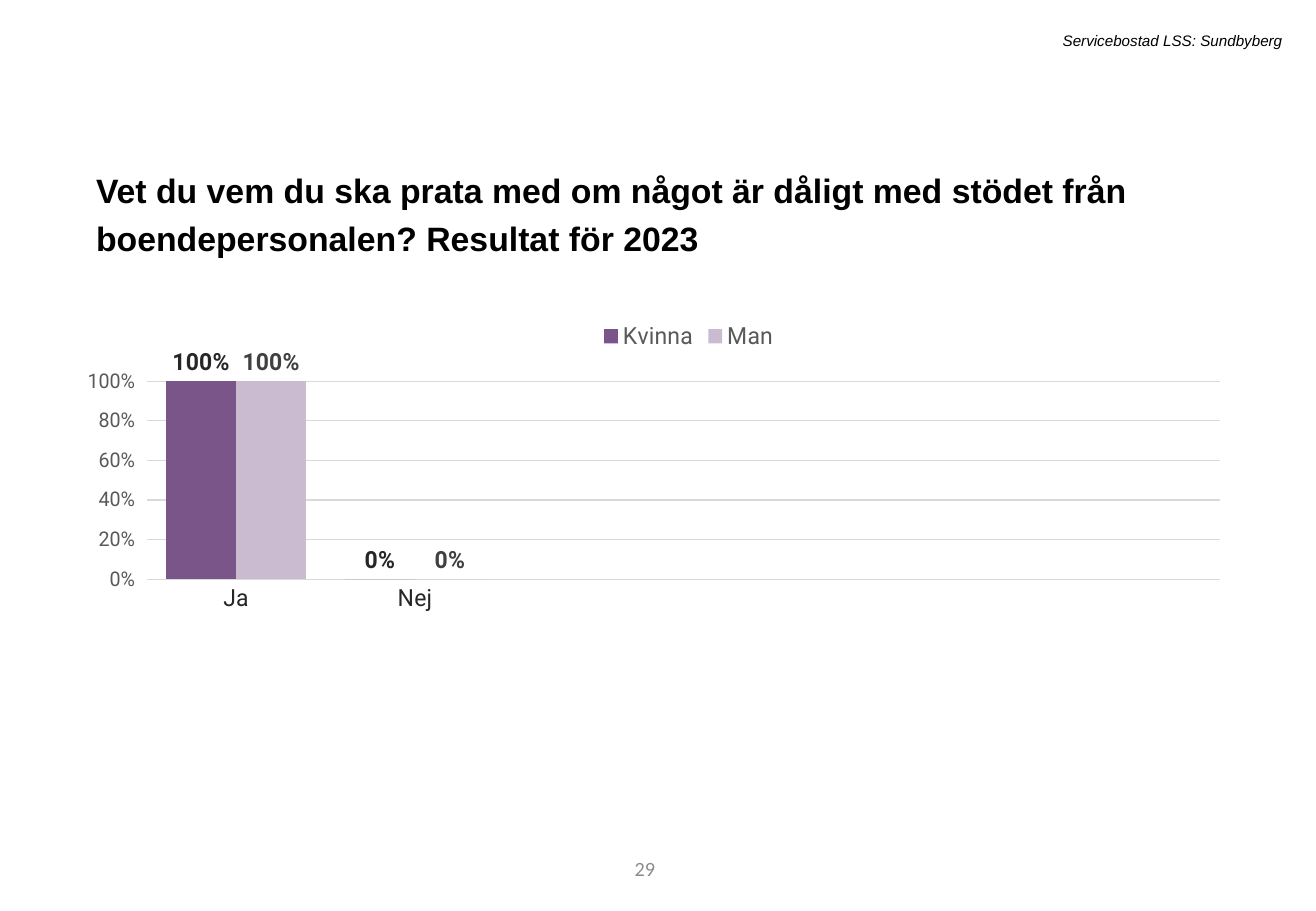
from pptx import Presentation
from pptx.chart.data import CategoryChartData
from pptx.dml.color import RGBColor
from pptx.enum.chart import XL_CHART_TYPE, XL_LABEL_POSITION, XL_LEGEND_POSITION, XL_TICK_MARK
from pptx.enum.text import MSO_ANCHOR, MSO_AUTO_SIZE, PP_ALIGN
from pptx.oxml import parse_xml
from pptx.oxml.ns import nsdecls
from pptx.util import Inches, Pt

COLORS = {
    "black": "000000",
    "page": "8C8C8C",
    "grid": "D9D9D9",
    "axis": "595959",
    "dark": "262626",
    "medium": "404040",
    "women": "7A5589",
    "men": "CABBD0",
}
CATEGORIES = ["Ja", "Nej", "", "", "", ""]
# Name, values, fill and label colour of each series
SERIES = [
    ("Kvinna", (1, 0), "women", "dark"),
    ("Man", (1, 0), "men", "medium"),
]


def color(name):
    return RGBColor.from_string(COLORS[name])


def format_font(font, size, color_name, name="Roboto", bold=False, italic=False):
    font.name = name
    font.size = Pt(size)
    font.bold = bold
    font.italic = italic
    font.color.rgb = color(color_name)


def write_text(shape, text, align=PP_ALIGN.LEFT, anchor=MSO_ANCHOR.TOP,
               auto_size=MSO_AUTO_SIZE.SHAPE_TO_FIT_TEXT, line_spacing=None,
               space_before=None, **font_format):
    frame = shape.text_frame
    frame.word_wrap = True
    frame.auto_size = auto_size
    frame.vertical_anchor = anchor
    paragraph = frame.paragraphs[0]
    paragraph.alignment = align
    paragraph.line_spacing = line_spacing
    paragraph.space_before = space_before
    run = paragraph.add_run()
    run.text = text
    format_font(run.font, **font_format)


def add_header(slide, left, top, width, height):
    box = slide.shapes.add_textbox(left, top, width, height)
    write_text(box, "Servicebostad LSS: Sundbyberg", align=PP_ALIGN.RIGHT,
               size=9, color_name="black", name="Arial", italic=True)


def add_title(slide, left, top, width, height):
    title = slide.shapes.title
    title.left, title.top, title.width, title.height = left, top, width, height
    write_text(title, "Vet du vem du ska prata med om något är dåligt med stödet från "
               "boendepersonalen? Resultat för 2023", line_spacing=1.2,
               space_before=Pt(10), size=20, color_name="black", name="Arial", bold=True)


def add_page_number(slide, left, top, width, height):
    box = slide.shapes.add_textbox(left, top, width, height)
    write_text(box, "29", align=PP_ALIGN.RIGHT, anchor=MSO_ANCHOR.MIDDLE,
               auto_size=MSO_AUTO_SIZE.NONE, size=12, color_name="page", name="Calibri")


def manual_layout(target=None, **fractions):
    """Return a chart layout element; fractions are x, y, w and h."""
    parts = f'<c:layoutTarget val="{target}"/>' if target else ""
    parts += "".join(f'<c:{key}Mode val="edge"/>' for key in "xy")
    parts += "".join(f'<c:{key} val="{value}"/>' for key, value in fractions.items())
    return parse_xml(f'<c:layout {nsdecls("c")}><c:manualLayout>{parts}'
                     '</c:manualLayout></c:layout>')


def add_result_chart(slide, left, top, width, height):
    data = CategoryChartData(number_format="0%")
    data.categories = CATEGORIES
    for name, values, _, _ in SERIES:
        data.add_series(name, values)
    chart = slide.shapes.add_chart(XL_CHART_TYPE.COLUMN_CLUSTERED,
                                   left, top, width, height, data).chart
    chart.has_title = False
    format_font(chart.font, 10, "black")

    # Legend
    chart.has_legend = True
    chart.legend.position = XL_LEGEND_POSITION.TOP
    chart.legend.include_in_layout = False
    format_font(chart.legend.font, 14, "axis")
    chart.element.xpath(".//c:legendPos")[0].addnext(manual_layout(x=0.43, y=0.02))

    # Plot area
    plot_area = chart.element.xpath(".//c:plotArea")[0]
    for layout in plot_area.xpath("./c:layout"):
        plot_area.remove(layout)
    plot_area.insert(0, manual_layout("inner", x=0.025, y=0.154, w=0.966, h=0.413))

    # Axes
    category_axis = chart.category_axis
    category_axis.major_tick_mark = XL_TICK_MARK.NONE
    format_font(category_axis.tick_labels.font, 14, "dark")
    value_axis = chart.value_axis
    value_axis.minimum_scale, value_axis.maximum_scale = 0, 1
    value_axis.major_unit = 0.2
    value_axis.major_tick_mark = XL_TICK_MARK.OUTSIDE
    value_axis.tick_labels.number_format = "0%"
    value_axis.tick_labels.number_format_is_linked = False
    format_font(value_axis.tick_labels.font, 12, "axis")
    value_axis.format.line.fill.background()
    for line in (category_axis.format.line, value_axis.major_gridlines.format.line):
        line.color.rgb = color("grid")
        line.width = Pt(0.75)

    # Columns and their labels
    plot = chart.plots[0]
    plot.gap_width = 55
    plot.overlap = 0
    plot.vary_by_categories = False
    for series, (_, _, fill, label_color) in zip(plot.series, SERIES):
        series.format.fill.solid()
        series.format.fill.fore_color.rgb = color(fill)
        labels = series.data_labels
        labels.show_value = True
        labels.position = XL_LABEL_POSITION.OUTSIDE_END
        labels.number_format = "0%"
        labels.number_format_is_linked = False
        format_font(labels.font, 14, label_color, bold=True)


def main():
    presentation = Presentation()
    presentation.slide_width = Inches(10.83)
    presentation.slide_height = Inches(7.5)
    slide = presentation.slides.add_slide(presentation.slide_layouts[5])
    add_page_number(slide, Inches(3.05), Inches(6.95), Inches(2.44), Inches(0.4))
    add_result_chart(slide, Inches(0.72), Inches(2.53), Inches(9.4), Inches(3.95))
    add_title(slide, Inches(0.69), Inches(1.28), Inches(9.4), Inches(0.47))
    add_header(slide, Inches(1.79), Inches(0.21), Inches(8.86), Inches(0.25))
    presentation.save("out.pptx")


if __name__ == "__main__":
    main()
